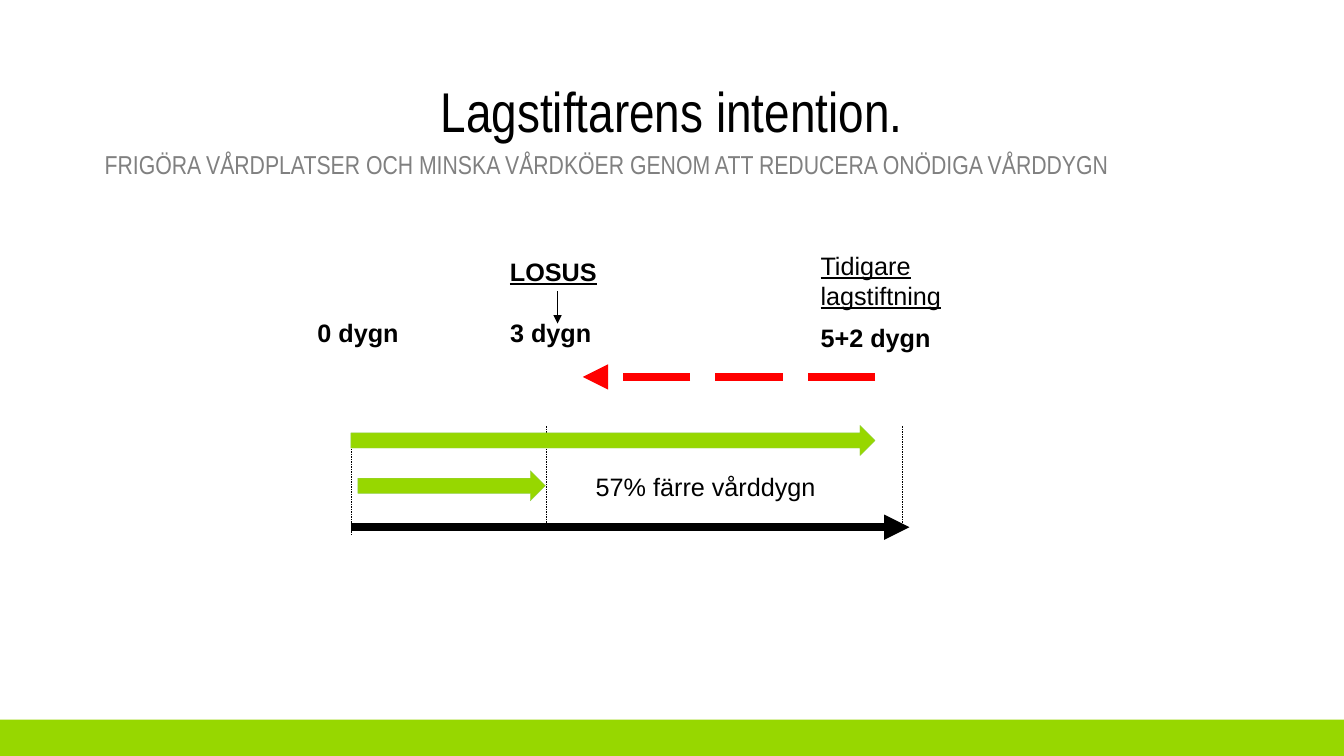
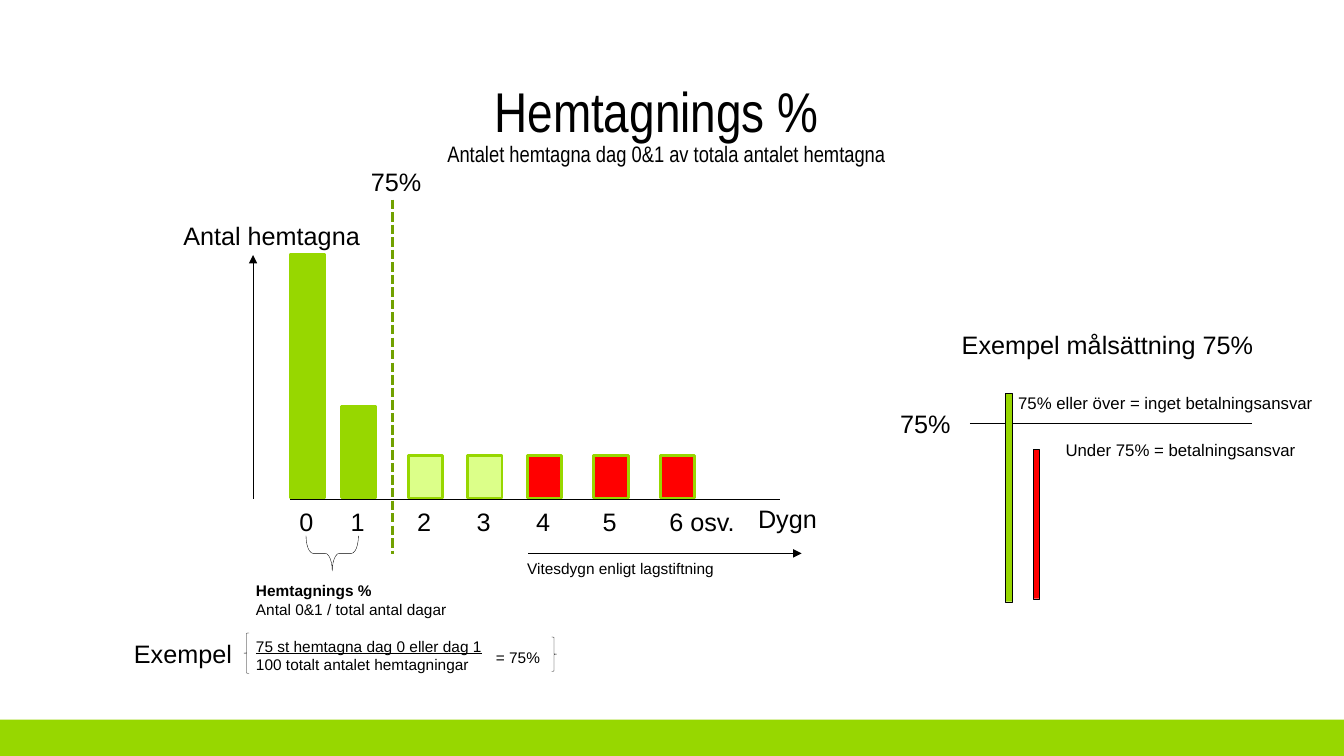
from lxml import etree
from pptx import Presentation
from pptx import util as u
from pptx.dml.color import RGBColor
from pptx.enum import dml, shapes, text
from pptx.oxml.ns import qn

BLACK, GREY, GREEN, RED = "000000", "808080", "97D700", "FF0000"
PALE_GREEN, DARK_GREEN, EDGE_GREEN = "DCFF89", "71A100", "92D050"
NARROW = {"name": "Arial Narrow"}
SHAPE, DASH = shapes.MSO_SHAPE, dml.MSO_LINE


def rgb(value):
    return RGBColor.from_string(value)


class Deck:
    """Holds the shared style and the slide being drawn."""

    base_font = {"name": "Arial", "size": 18, "bold": False, "underline": False}

    def __init__(self):
        self.prs = Presentation()
        self.prs.slide_width = u.Inches(13.33)
        self.prs.slide_height = u.Inches(7.5)
        self.slide = None

    def new_slide(self, title, title_left):
        self.slide = self.prs.slides.add_slide(self.prs.slide_layouts[6])
        self.shape(SHAPE.RECTANGLE, (0, 7.14, 13.33, 0.36), GREEN)
        self.text(title, (title_left, 0.79, 11.44, 0.71), size=40,
                  align=text.PP_ALIGN.CENTER, spacing=0.9, **NARROW)

    def text(self, content, at, color=BLACK, align=text.PP_ALIGN.LEFT,
             spacing=1.0, **font):
        """Content is a string, or a list of (string, font, space before)."""
        box = self.slide.shapes.add_textbox(*map(u.Inches, at))
        frame = box.text_frame
        frame.word_wrap = True
        lines = [(content, {}, 0)] if isinstance(content, str) else content
        for number, (words, own_font, before) in enumerate(lines):
            paragraph = frame.add_paragraph() if number else frame.paragraphs[0]
            paragraph.alignment = align
            paragraph.line_spacing = spacing
            paragraph.space_before = u.Pt(before)
            run = paragraph.add_run()
            run.text = words
            run.font.color.rgb = rgb(color)
            for key, value in {**self.base_font, **font, **own_font}.items():
                setattr(run.font, key, u.Pt(value) if key == "size" else value)
        return box

    def shape(self, kind, at, fill=None, line=None, weight=0.25, rotation=0):
        item = self.slide.shapes.add_shape(kind, *map(u.Inches, at))
        item.shadow.inherit = False
        item.rotation = rotation
        if fill:
            item.fill.solid()
            item.fill.fore_color.rgb = rgb(fill)
        else:
            item.fill.background()
        if line:
            item.line.color.rgb = rgb(line)
            item.line.width = u.Pt(weight)
        else:
            item.line.fill.background()
        return item

    def line(self, start, end, color=BLACK, weight=0.25, dash=None, arrow=False):
        item = self.slide.shapes.add_connector(
            shapes.MSO_CONNECTOR.STRAIGHT, *map(u.Inches, (*start, *end)))
        item.line.color.rgb = rgb(color)
        item.line.width = u.Pt(weight)
        if dash:
            item.line.dash_style = dash
        if arrow:
            outline = item.line._get_or_add_ln()
            etree.SubElement(outline, qn("a:tailEnd"), type="triangle")
        etree.SubElement(item._element.spPr, qn("a:effectLst"))
        return item


def intention_slide(deck):
    deck.new_slide("Lagstiftarens intention.", 0.94)
    deck.text("FRIGÖRA VÅRDPLATSER OCH MINSKA VÅRDKÖER GENOM ATT REDUCERA "
              "ONÖDIGA VÅRDDYGN", (0.94, 1.46, 11.44, 0.4), GREY,
              size=18.5, spacing=0.9, **NARROW)

    # Time axis and the shortened stay
    deck.line((3.48, 5.23), (9.02, 5.23), weight=6, arrow=True)
    deck.line((8.68, 3.74), (5.78, 3.74), RED, 6, DASH.LONG_DASH, True)

    # Day limits
    for left, top in ((8.95, 4.23), (5.42, 4.23), (3.48, 4.33)):
        deck.line((left, top), (left, top + 0.99), dash=DASH.DASH)

    # Length of stay before and after
    for left, top, width in ((3.48, 4.22, 5.2), (3.55, 4.67, 1.86)):
        deck.shape(SHAPE.RIGHT_ARROW, (left, top, width, 0.3), GREEN, EDGE_GREEN)
    deck.text("57% färre vårddygn", (5.81, 4.63, 3.42, 0.4))

    # Day labels
    for days, left, top in (("0 dygn", 3.05, 3.1), ("3 dygn", 4.96, 3.1),
                            ("5+2 dygn", 8.04, 3.15)):
        deck.text(days, (left, top, 1.55, 0.4), bold=True)

    # The two laws
    deck.text("Tidigare lagstiftning", (8.04, 2.43, 2.07, 0.71), underline=True)
    losus = deck.text("LOSUS", (4.96, 2.49, 1.14, 0.4), bold=True, underline=True)
    pointer = deck.line((5.53, 2.89), (5.53, 3.21), arrow=True)
    pointer.begin_connect(losus, 2)


def discharge_slide(deck):
    deck.new_slide("Hemtagnings %", 0.79)
    deck.text("Antalet hemtagna dag 0&1 av totala antalet hemtagna",
              (0.89, 1.37, 11.44, 0.36), size=16, spacing=0.9,
              align=text.PP_ALIGN.CENTER, **NARROW)

    # Axes
    deck.line((2.88, 4.95), (7.74, 4.95))
    deck.line((2.51, 4.95), (2.51, 2.53), arrow=True)
    deck.text("Antal hemtagna", (1.72, 2.14, 2.16, 0.4))
    deck.text("Dygn", (7.42, 4.94, 1.06, 0.4))

    # One bar with its label per day
    baseline = 4.94
    for day, left, height, fill in (
            ("0", 2.88, 2.42, GREEN), ("1", 3.39, 0.91, GREEN),
            ("2", 4.05, 0.42, PALE_GREEN), ("3", 4.64, 0.42, PALE_GREEN),
            ("4", 5.23, 0.42, RED), ("5", 5.89, 0.42, RED),
            ("6 osv.", 6.55, 0.42, RED)):
        deck.shape(SHAPE.RECTANGLE, (left, baseline - height, 0.34, height),
                   fill, GREEN, 2)
        deck.text(day, (left - 0.01, 4.97, 0.9, 0.4))

    # Limit between day 1 and day 2
    deck.line((3.89, 1.98), (3.89, 5.5), DARK_GREEN, 2.25, DASH.SQUARE_DOT)
    deck.text("75%", (3.58, 1.6, 0.97, 0.4))

    # Days with a fee
    deck.line((5.24, 5.49), (7.95, 5.49), arrow=True)
    deck.text("Vitesdygn enligt lagstiftning", (5.13, 5.5, 3.31, 0.29), size=11)

    # Formula and worked example
    days_brace = deck.shape(SHAPE.RIGHT_BRACE, (3.12, 5.23, 0.35, 0.52),
                            line=BLACK, rotation=90)
    days_brace.adjustments[0] = 0.2
    deck.text([("Hemtagnings %", {"bold": True}, 0),
               ("Antal 0&1 / total antal dagar", {}, 0),
               ("75 st hemtagna dag 0 eller dag 1", {"underline": True}, 13),
               ("100 totalt antalet hemtagningar", {}, 0)],
              (2.44, 5.72, 3.22, 1.21), size=11)
    deck.text("= 75%", (4.82, 6.38, 3.23, 0.29), size=11)
    deck.text("Exempel", (1.23, 6.28, 1.4, 0.4))
    deck.shape(SHAPE.LEFT_BRACE, (2.42, 6.28, 0.05, 0.4), line=BLACK)
    deck.shape(SHAPE.RIGHT_BRACE, (5.47, 6.32, 0.05, 0.34), line=BLACK)

    # Target example
    deck.text("Exempel målsättning 75%", (9.44, 3.22, 3.31, 0.4))
    target = deck.text("75%", (8.83, 4.0, 0.79, 0.4))
    target_line = deck.line((9.62, 4.2), (12.42, 4.2))
    target_line.begin_connect(target, 3)
    deck.text("75% eller över = inget betalningsansvar",
              (10, 3.85, 3.33, 0.3), size=12)
    deck.text("Under 75% = betalningsansvar", (10.47, 4.31, 2.76, 0.3), size=12)
    deck.shape(SHAPE.RECTANGLE, (9.97, 3.9, 0.07, 2.07), GREEN, BLACK)
    deck.shape(SHAPE.RECTANGLE, (10.25, 4.46, 0.06, 1.48), RED, BLACK)


def main():
    deck = Deck()
    intention_slide(deck)
    discharge_slide(deck)
    deck.prs.save("out.pptx")


if __name__ == "__main__":
    main()
